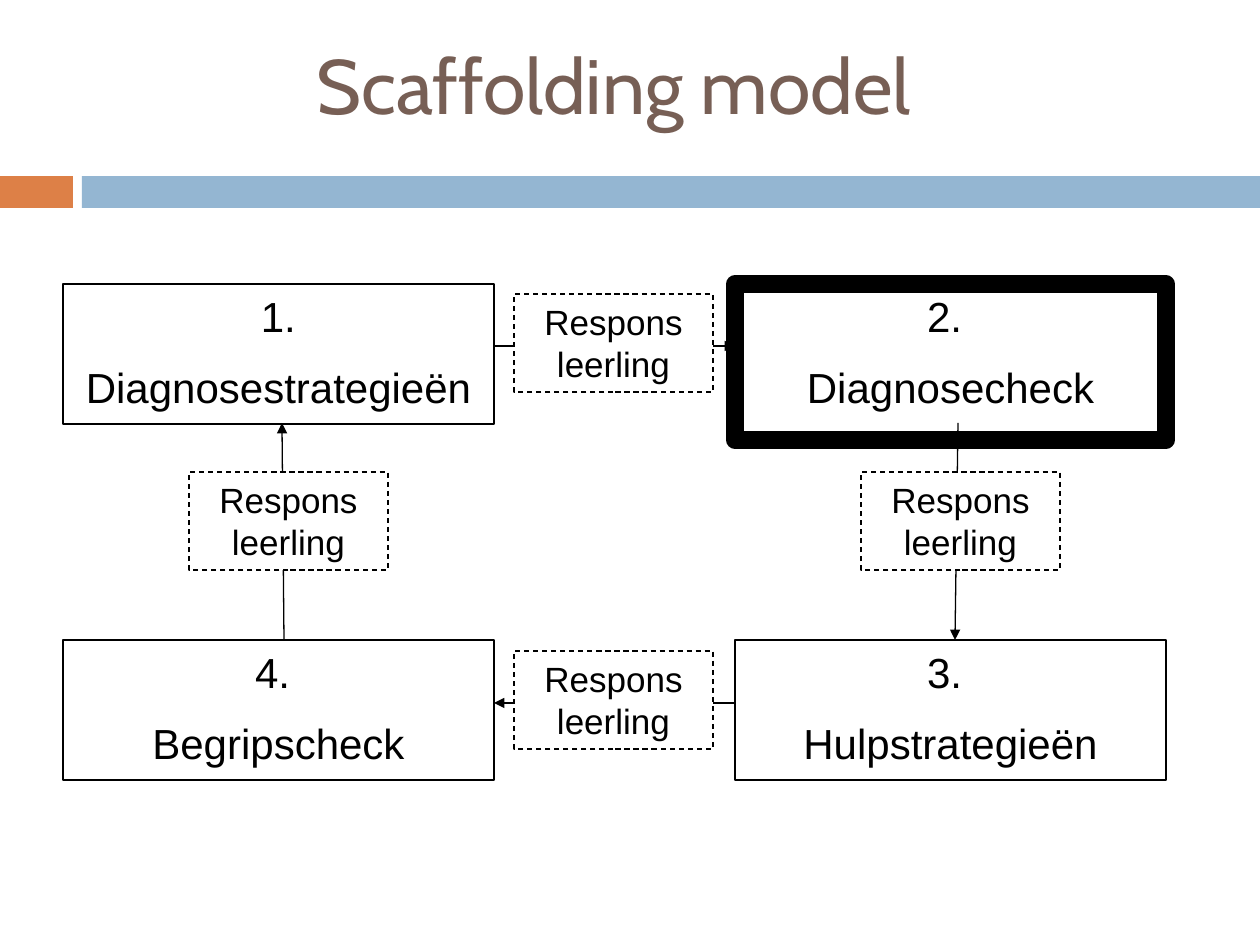
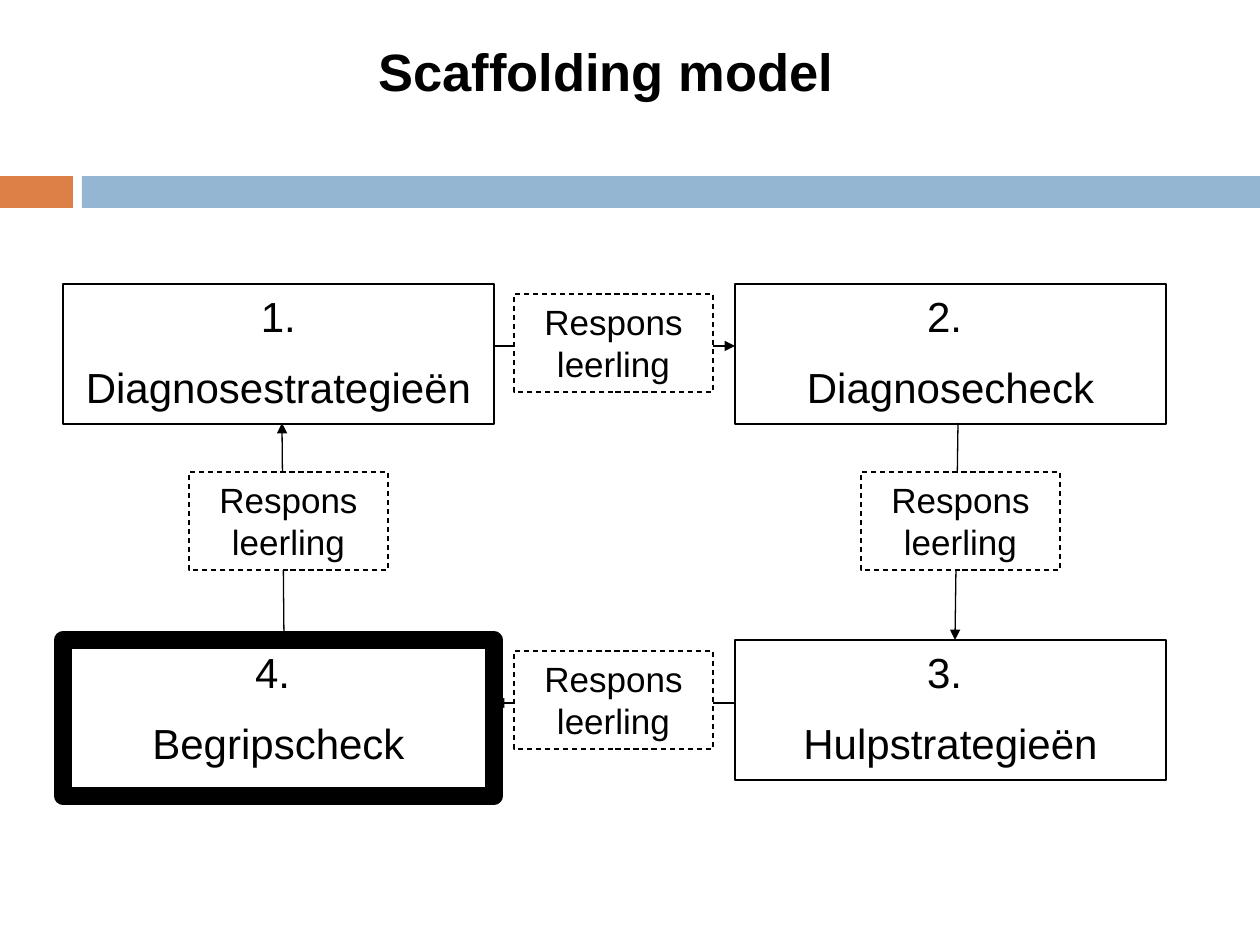
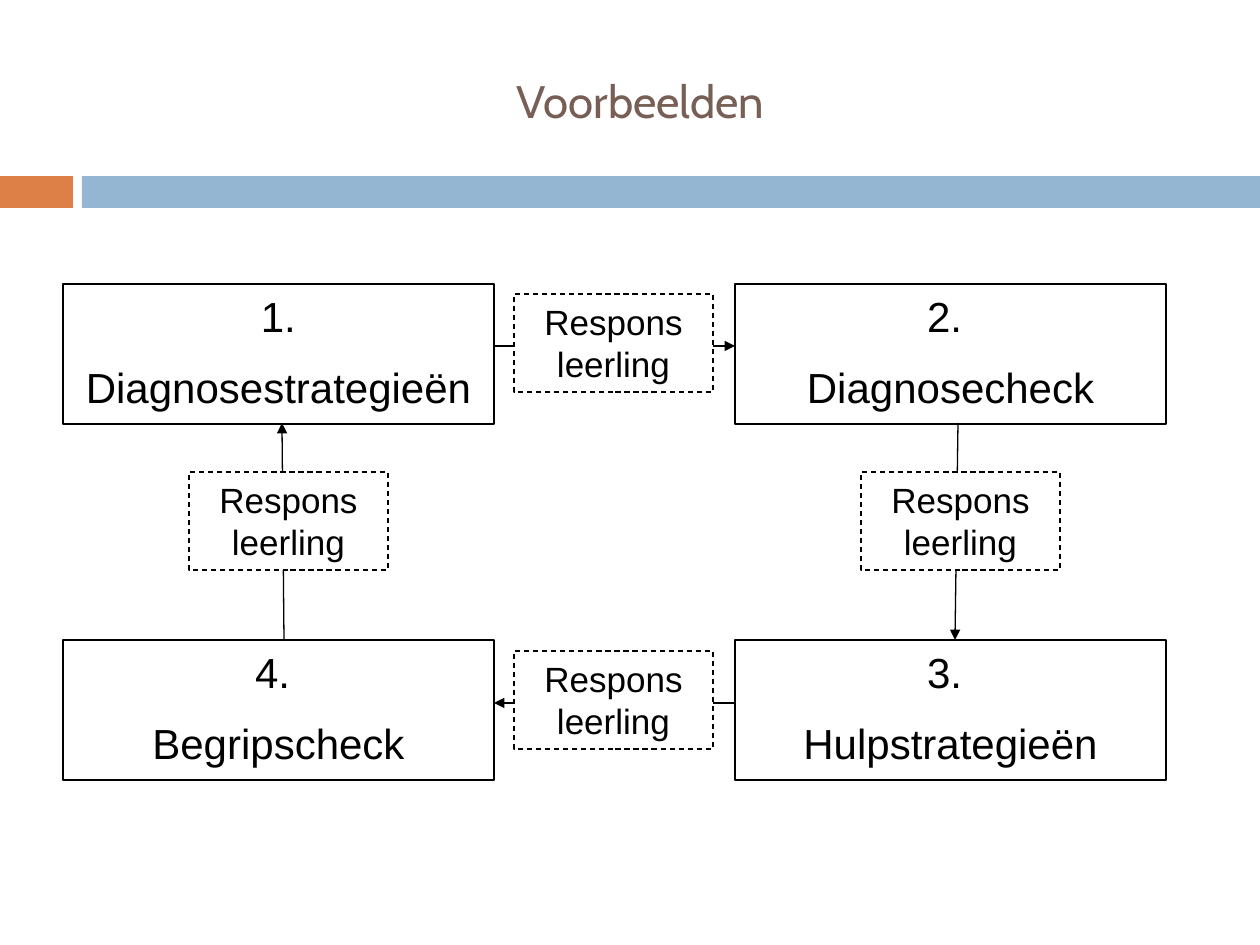
import pptx
import pptx.util
import pptx.dml.color
import pptx.enum.dml
import pptx.enum.shapes
import pptx.enum.text
import pptx.oxml.ns
import lxml.etree

COLORS = {"ink": "000000", "paper": "FFFFFF", "title": "775F55", "orange": "DD8047", "blue": "94B6D2"}
SCALE = 914400 / 126
THIN, THICK = 0.75, 10
SHORT, TALL = 140, 156

SLIDES = [
    {"title": "Scaffolding model", "at": (105, 26, 1018, 116), "marked": "Diagnosecheck",
     "style": {"size": 44, "font": "Cabin", "color": "title"}},
    {"title": "Scaffolding model", "at": (97, 39, 1018, 116), "marked": "Begripscheck",
     "style": {"size": 30, "bold": True, "anchor": "TOP", "inset": 0}},
    {"title": "Voorbeelden ", "at": (84, 32, 1124, 136), "marked": None,
     "style": {"size": 26, "font": "Cabin", "color": "title"}},
]
BANDS = [("orange", (0, 176, 73, 32)), ("blue", (82, 176, 1178, 32))]
LEFT, RIGHT, UPPER, LOWER, STEP_WIDTH = 63, 735, 284, 640, 431
STEPS = [
    ("1.", "Diagnosestrategieën", LEFT, UPPER),
    ("2. ", "Diagnosecheck", RIGHT, UPPER),
    ("3. ", "Hulpstrategieën", RIGHT, LOWER),
    ("4. ", "Begripscheck", LEFT, LOWER),
]
RESPONSE = "Respons leerling"
RESPONSE_SIZE = (199, 98)
RESPONSES = [
    {"arrow": (284, 640, 282, 423), "at": (189, 472)},
    {"arrow": (494, 346, 735, 346), "at": (514, 294)},
    {"arrow": (958, 423, 955, 640), "at": (861, 472)},
    {"arrow": (735, 703, 494, 703), "at": (514, 651)},
]


def emu(*lengths):
    return [pptx.util.Emu(round(length * SCALE)) for length in lengths]


def rgb(name):
    return pptx.dml.color.RGBColor.from_string(COLORS[name])


def write(box, *lines, size=24, font="Arial", color="ink", bold=False, anchor="TOP", inset=None):
    frame = box.text_frame
    frame.word_wrap = True
    frame.auto_size = pptx.enum.text.MSO_AUTO_SIZE.NONE
    frame.vertical_anchor = pptx.enum.text.MSO_ANCHOR[anchor]
    if inset is not None:
        frame.margin_left, frame.margin_top, frame.margin_right, frame.margin_bottom = emu(*[inset] * 4)
    for index, line in enumerate(lines):
        para = frame.add_paragraph() if index else frame.paragraphs[0]
        para.alignment = pptx.enum.text.PP_ALIGN.CENTER
        para.space_before = pptx.util.Pt(12 if index else 0)
        span = para.add_run()
        span.text = line
        span.font.size = pptx.util.Pt(size)
        span.font.name = font
        span.font.bold = bold
        span.font.color.rgb = rgb(color)


def add_box(page, at, fill=None, line=None, dashed=False):
    box = page.shapes.add_shape(pptx.enum.shapes.MSO_SHAPE.RECTANGLE, *emu(*at))
    box.shadow.inherit = False
    if fill:
        box.fill.solid()
        box.fill.fore_color.rgb = rgb(fill)
    else:
        box.fill.background()
    if line:
        box.line.color.rgb = rgb("ink")
        box.line.width = pptx.util.Pt(line)
        if dashed:
            box.line.dash_style = pptx.enum.dml.MSO_LINE.DASH
    else:
        box.line.fill.background()
    return box


def add_arrow(page, ends):
    arrow = page.shapes.add_connector(pptx.enum.shapes.MSO_CONNECTOR.STRAIGHT, *emu(*ends))
    arrow.line.color.rgb = rgb("ink")
    arrow.line.width = pptx.util.Pt(THIN)
    properties = arrow.element.spPr
    outline = properties.find(pptx.oxml.ns.qn("a:ln"))
    lxml.etree.SubElement(outline, pptx.oxml.ns.qn("a:tailEnd"), type="triangle")
    lxml.etree.SubElement(properties, pptx.oxml.ns.qn("a:effectLst"))


def add_title(page, text, at, style):
    title = page.shapes.title
    title.left, title.top, title.width, title.height = emu(*at)
    write(title, text, **{"anchor": "MIDDLE", **style})


def add_model(page, marked):
    for number, name, left, top in STEPS:
        height, line = (TALL, THICK) if name == marked else (SHORT, THIN)
        write(add_box(page, (left, top, STEP_WIDTH, height), line=line), number, name)
    for response in RESPONSES:
        add_arrow(page, response["arrow"])
        box = add_box(page, response["at"] + RESPONSE_SIZE, fill="paper", line=THIN, dashed=True)
        write(box, RESPONSE, size=20)


def main():
    deck = pptx.Presentation()
    deck.slide_width, deck.slide_height = emu(1260, 945)
    for content in SLIDES:
        page = deck.slides.add_slide(deck.slide_layouts[5])
        for color, at in BANDS:
            add_box(page, at, fill=color)
        add_title(page, content["title"], content["at"], content["style"])
        add_model(page, content["marked"])
    deck.save("out.pptx")


if __name__ == "__main__":
    main()
